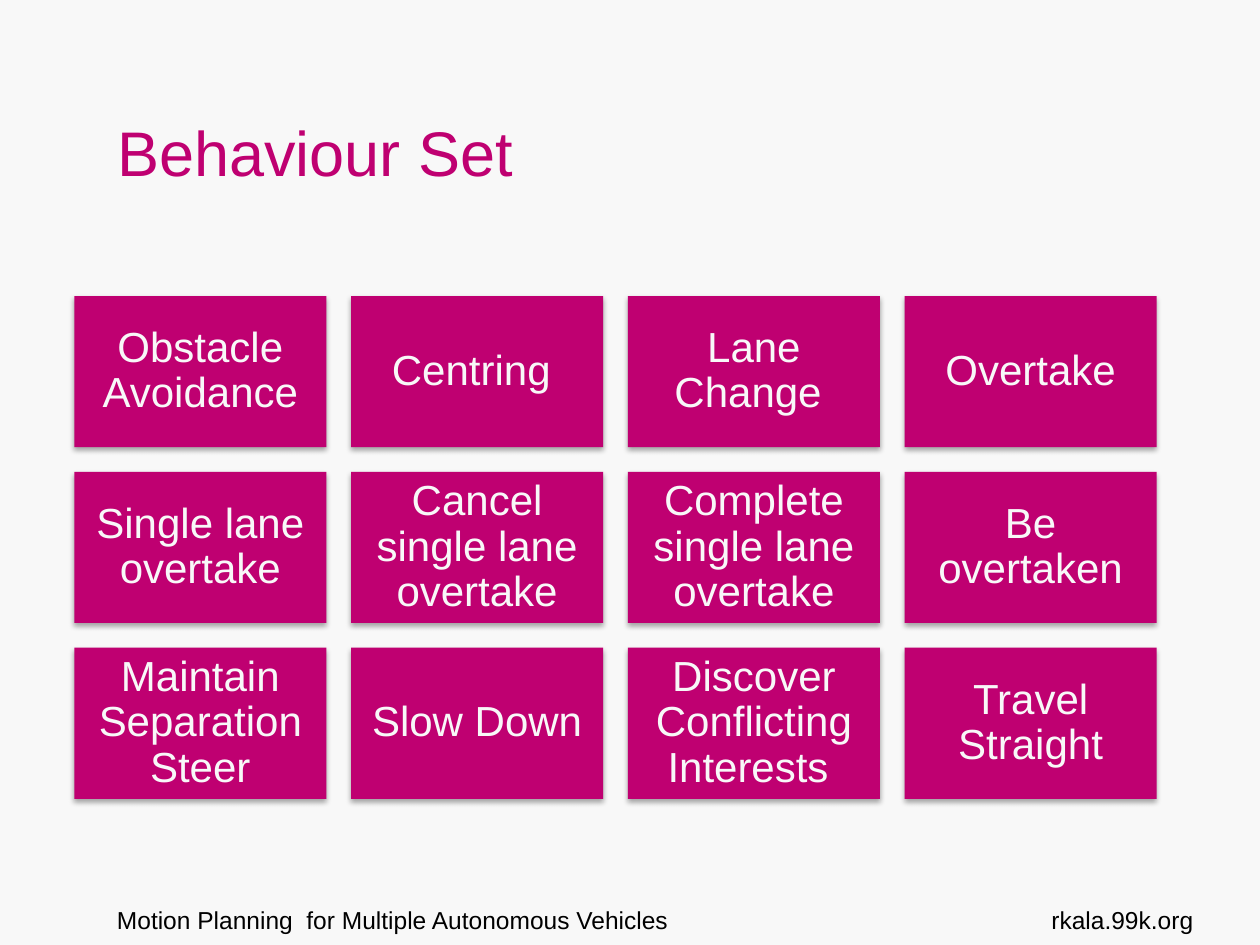
from lxml import etree
from pptx import Presentation
from pptx.dml.color import RGBColor
from pptx.enum.shapes import MSO_SHAPE
from pptx.enum.text import MSO_ANCHOR, PP_ALIGN
from pptx.oxml.ns import qn
from pptx.util import Inches, Pt

RECTANGLE = MSO_SHAPE.RECTANGLE
LEFT, CENTER, RIGHT = PP_ALIGN.LEFT, PP_ALIGN.CENTER, PP_ALIGN.RIGHT
MIDDLE, BOTTOM = MSO_ANCHOR.MIDDLE, MSO_ANCHOR.BOTTOM

MAGENTA = RGBColor(0xBF, 0x00, 0x71)
OFF_WHITE = RGBColor(0xF8, 0xF8, 0xF8)
BLACK = RGBColor(0x00, 0x00, 0x00)
FONT = "Arial"
TITLE_ONLY = 5

# Grid of behaviours, in inches
GRID_LEFT, GRID_TOP = 0.59, 2.35
GRID_WIDTH, GRID_HEIGHT = 8.59, 3.99
TILE_WIDTH, TILE_HEIGHT = 2, 1.2
BEHAVIOURS = [
    ["Obstacle Avoidance", "Centring ", "Lane Change ", "Overtake"],
    ["Single lane overtake", "Cancel single lane overtake",
     "Complete single lane overtake", "Be overtaken"],
    ["Maintain Separation Steer", "Slow Down",
     "Discover Conflicting Interests ", "Travel Straight"],
]


def write_text(shape, text, size, color, alignment):
    shape.text_frame.text = text
    paragraph = shape.text_frame.paragraphs[0]
    paragraph.alignment = alignment
    font = paragraph.runs[0].font
    font.name = FONT
    font.size = Pt(size)
    font.color.rgb = color
    return paragraph


def add_title(slide, text):
    title = slide.shapes.title
    title.left, title.top = Inches(0.83), Inches(0.3)
    title.width, title.height = Inches(6.77), Inches(1.25)
    write_text(title, text, 36, MAGENTA, LEFT)
    title.text_frame.vertical_anchor = BOTTOM
    title.text_frame.word_wrap = False


def add_footer(slide, left, width, text, alignment):
    box = slide.shapes.add_textbox(Inches(left), Inches(7.13), Inches(width), Inches(0.52))
    box.text_frame.word_wrap = True
    write_text(box, text, 14, BLACK, alignment)


def add_soft_shadow(shape):
    shape.shadow.inherit = False
    effects = shape._element.spPr.find(qn("a:effectLst"))
    shadow = etree.SubElement(effects, qn("a:outerShdw"), blurRad=str(Pt(3.1)),
                              dist=str(Pt(1.8)), dir="5400000", rotWithShape="0")
    color = etree.SubElement(shadow, qn("a:srgbClr"), val=str(BLACK))
    etree.SubElement(color, qn("a:alpha"), val="35000")


def add_tile(slide, left, top, text):
    tile = slide.shapes.add_shape(RECTANGLE, Inches(left), Inches(top),
                                  Inches(TILE_WIDTH), Inches(TILE_HEIGHT))
    tile.fill.solid()
    tile.fill.fore_color.rgb = MAGENTA
    tile.line.fill.background()
    add_soft_shadow(tile)
    frame = tile.text_frame
    frame.word_wrap = True
    frame.vertical_anchor = MIDDLE
    frame.margin_left = frame.margin_right = Inches(0.1)
    frame.margin_top = frame.margin_bottom = Inches(0.1)
    write_text(tile, text, 24, OFF_WHITE, CENTER).line_spacing = 0.9


def add_behaviour_grid(slide):
    column_step = (GRID_WIDTH - TILE_WIDTH) / (len(BEHAVIOURS[0]) - 1)
    row_step = (GRID_HEIGHT - TILE_HEIGHT) / (len(BEHAVIOURS) - 1)
    for row, names in enumerate(BEHAVIOURS):
        for column, name in enumerate(names):
            add_tile(slide, GRID_LEFT + column * column_step, GRID_TOP + row * row_step, name)


def main():
    presentation = Presentation()
    presentation.slide_width = Inches(10)
    presentation.slide_height = Inches(7.5)
    slide = presentation.slides.add_slide(presentation.slide_layouts[TITLE_ONLY])
    slide.background.fill.solid()
    slide.background.fill.fore_color.rgb = OFF_WHITE

    add_title(slide, "Behaviour Set")
    add_behaviour_grid(slide)

    # Footer line
    add_footer(slide, 0.83, 6.93, "Motion Planning  for Multiple Autonomous Vehicles", LEFT)
    add_footer(slide, 8.07, 1.5, "rkala.99k.org", RIGHT)

    presentation.save("out.pptx")


if __name__ == "__main__":
    main()
